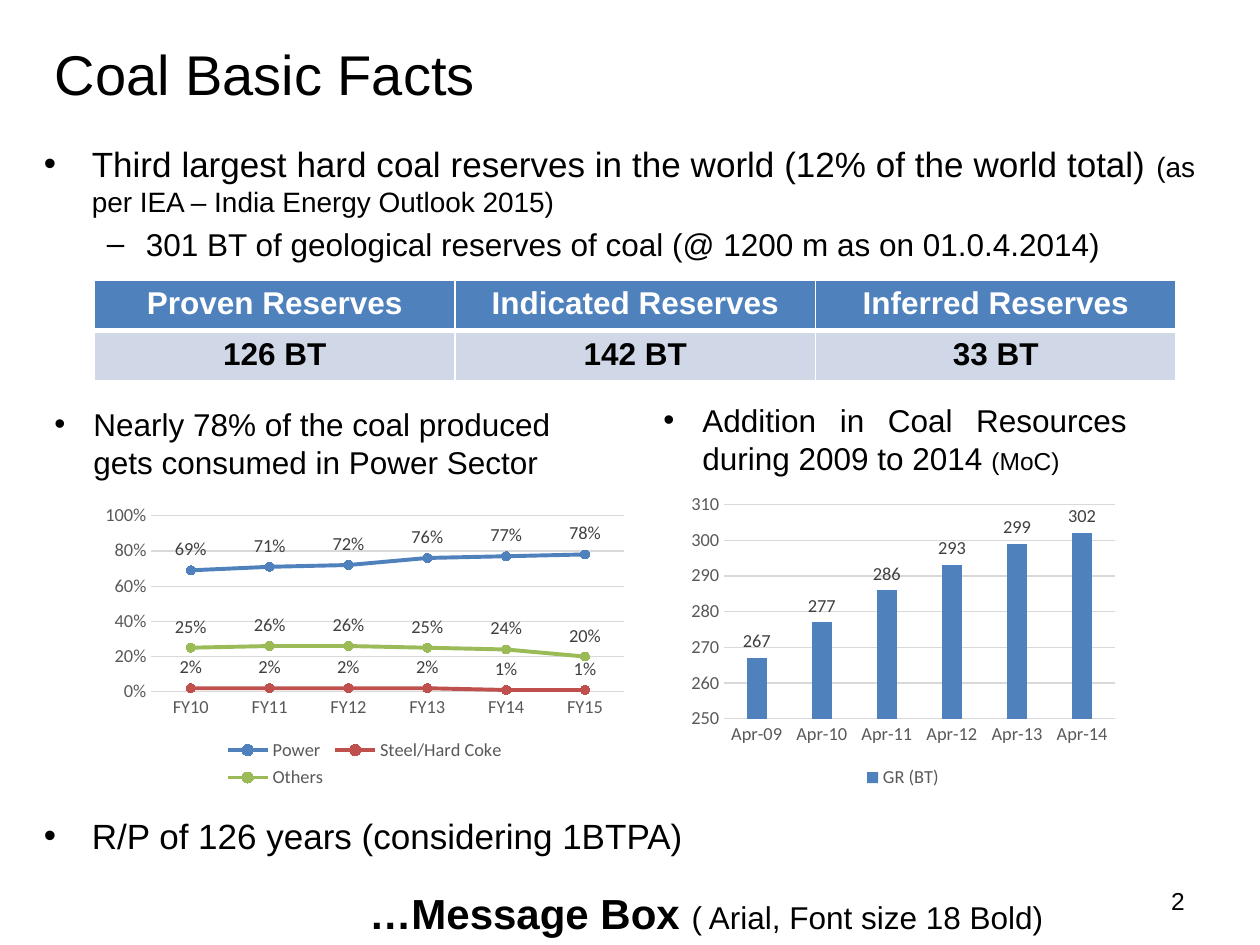
from lxml.etree import SubElement
from pptx import Presentation
from pptx.chart.data import CategoryChartData
from pptx.dml.color import RGBColor
from pptx.enum.chart import (XL_CHART_TYPE, XL_LABEL_POSITION, XL_LEGEND_POSITION,
                             XL_MARKER_STYLE, XL_TICK_MARK)
from pptx.enum.text import MSO_ANCHOR, PP_ALIGN
from pptx.oxml.ns import qn
from pptx.util import Inches, Pt

BLACK = RGBColor(0x00, 0x00, 0x00)
WHITE = RGBColor(0xFF, 0xFF, 0xFF)
BLUE = RGBColor(0x4F, 0x81, 0xBD)
RED = RGBColor(0xC0, 0x50, 0x4D)
GREEN = RGBColor(0x9B, 0xBB, 0x59)
PALE_BLUE = RGBColor(0xD0, 0xD8, 0xE8)
AXIS_TEXT = RGBColor(0x59, 0x59, 0x59)
LABEL_TEXT = RGBColor(0x40, 0x40, 0x40)
GRID_LINE = RGBColor(0xD9, 0xD9, 0xD9)

deck = Presentation()
deck.slide_width, deck.slide_height = Inches(10), Inches(7.5)
CELL = deck.slide_width / 120  # the slide is a grid of 120 columns by 90 rows
slide = deck.slides.add_slide(deck.slide_layouts[5])


def place(left, top, width, height):
    """Turn grid columns and rows into slide lengths."""
    return [round(part * CELL) for part in (left, top, width, height)]


def write(frame, runs, align=PP_ALIGN.LEFT, bullet=None, indent=0, hang=0, before=0):
    """Add a paragraph of (text, size, bold, colour) runs to a text frame."""
    first = frame.paragraphs[0]
    paragraph = frame.add_paragraph() if first.runs else first
    properties = paragraph._p.get_or_add_pPr()
    if bullet:
        properties.set("marL", str(Inches(indent)))
        properties.set("indent", str(-Inches(hang)))
        SubElement(properties, qn("a:buFont")).set("typeface", "Arial")
        SubElement(properties, qn("a:buChar")).set("char", bullet)
    paragraph.alignment = align
    if before:
        paragraph.space_before = Pt(before)
    for text, size, bold, color in runs:
        run = paragraph.add_run()
        run.text = text
        run.font.name, run.font.size, run.font.bold = "Arial", Pt(size), bold
        run.font.color.rgb = color


# Title
title = slide.shapes.title
title.left, title.top, title.width, title.height = place(4, 2, 103, 10)
title.text_frame.vertical_anchor = MSO_ANCHOR.MIDDLE
write(title.text_frame, [("Coal Basic Facts", 32, False, BLACK)])

# Text blocks: place on the grid, then paragraphs
first_level = dict(align=PP_ALIGN.JUSTIFY, bullet="•", indent=0.38, hang=0.38)
second_level = dict(align=PP_ALIGN.JUSTIFY, bullet="–", indent=0.81, hang=0.31, before=3.6)
chart_heading = dict(bullet="•", indent=0.31, hang=0.31)
text_blocks = [
    ((3, 13, 112, 13), [
        ([("Third largest hard coal reserves in the world (12% of the world total) ", 20, False, BLACK),
          ("(as per IEA – India Energy Outlook 2015)", 16, False, BLACK)], first_level),
        ([("301 BT of geological reserves of coal (@ 1200 m as on 01.0.4.2014)", 18, False, BLACK)],
         second_level)]),
    ((4, 38, 53, 8.5), [
        ([("Nearly 78% of the coal produced gets consumed in Power Sector", 18, False, BLACK)],
         chart_heading)]),
    ((62, 37.6, 46.5, 8.5), [
        ([("Addition in Coal Resources during 2009 to 2014 ", 18, False, BLACK),
          ("(MoC)", 14, False, BLACK)], dict(chart_heading, align=PP_ALIGN.JUSTIFY))]),
    ((3, 77, 112, 5), [
        ([("R/P of 126 years (considering 1BTPA)", 20, False, BLACK)], first_level)]),
    ((34, 83.9, 80, 6.1), [
        ([("…Message Box ", 24, True, BLACK),
          ("( Arial, Font size 18 Bold)", 18, False, BLACK)], {})]),
    ((86, 83.4, 28, 4.8), [([("2", 14, False, BLACK)], dict(align=PP_ALIGN.RIGHT))]),
]
for area, paragraphs in text_blocks:
    frame = slide.shapes.add_textbox(*place(*area)).text_frame
    frame.word_wrap = True
    for runs, style in paragraphs:
        write(frame, runs, **style)
frame.vertical_anchor = MSO_ANCHOR.MIDDLE  # slide number

# Reserves table
reserves = [("Proven Reserves", "Indicated Reserves", "Inferred Reserves"),
            ("126 BT", "142 BT", "33 BT")]
row_styles = [(BLUE, WHITE, 3), (PALE_BLUE, BLACK, 1)]
table = slide.shapes.add_table(2, 3, *place(9, 26.65, 103, 9.1)).table
for row, (values, (fill, color, rule)) in enumerate(zip(reserves, row_styles)):
    for column, value in enumerate(values):
        cell = table.cell(row, column)
        write(cell.text_frame, [(value, 18, True, color)], PP_ALIGN.CENTER)
        borders = cell._tc.get_or_add_tcPr()
        top_rule = row_styles[row - 1][2] if row else 1
        for side, width in (("L", 1), ("R", 1), ("T", top_rule), ("B", rule)):
            border = SubElement(borders, qn(f"a:ln{side}"), w=str(Pt(width)))
            SubElement(SubElement(border, qn("a:solidFill")), qn("a:srgbClr")).set("val", str(WHITE))
        cell.fill.solid()
        cell.fill.fore_color.rgb = fill

# Charts: type, place, categories, series, number format, value scale
charts = [
    (XL_CHART_TYPE.COLUMN_CLUSTERED, (65, 46.4, 42, 29.2),
     [f"Apr-{year:02}" for year in range(9, 15)],
     [("GR (BT)", BLUE, (267, 277, 286, 293, 299, 302))], "0", (250, 310, 10)),
    (XL_CHART_TYPE.LINE_MARKERS, (9, 47.5, 51.5, 28.1),
     [f"FY{year}" for year in range(10, 16)],
     [("Power", BLUE, (0.69, 0.71, 0.72, 0.76, 0.77, 0.78)),
      ("Steel/Hard Coke", RED, (0.02, 0.02, 0.02, 0.02, 0.01, 0.01)),
      ("Others", GREEN, (0.25, 0.26, 0.26, 0.25, 0.24, 0.20))], "0%", (0, 1, 0.2)),
]
for kind, area, categories, series_list, number_format, scale in charts:
    data = CategoryChartData(number_format=number_format)
    data.categories = categories
    for name, color, values in series_list:
        data.add_series(name, values)
    chart = slide.shapes.add_chart(kind, *place(*area), data).chart
    chart.has_title = False
    chart.font.name, chart.font.size = "Calibri", Pt(10.5)
    chart.font.color.rgb = AXIS_TEXT
    chart.has_legend = True
    chart.legend.position = XL_LEGEND_POSITION.BOTTOM
    chart.legend.include_in_layout = False

    value_axis, category_axis = chart.value_axis, chart.category_axis
    value_axis.minimum_scale, value_axis.maximum_scale, value_axis.major_unit = scale
    value_axis.tick_labels.number_format = number_format
    value_axis.tick_labels.number_format_is_linked = False
    value_axis.format.line.fill.background()
    for axis in (value_axis, category_axis):
        axis.major_tick_mark = axis.minor_tick_mark = XL_TICK_MARK.NONE
    for line in (value_axis.major_gridlines.format.line, category_axis.format.line):
        line.color.rgb, line.width = GRID_LINE, Pt(0.75)

    is_column = kind == XL_CHART_TYPE.COLUMN_CLUSTERED
    plot = chart.plots[0]
    plot.vary_by_categories = False
    if is_column:
        plot.gap_width, plot.overlap = 219, -27
    for series, (name, color, values) in zip(plot.series, series_list):
        if is_column:
            fills = [series.format.fill]
        else:
            series.smooth = False
            series.format.line.color.rgb, series.format.line.width = color, Pt(2.25)
            series.marker.style, series.marker.size = XL_MARKER_STYLE.CIRCLE, 5
            series.marker.format.line.color.rgb = color
            fills = [series.marker.format.fill]
        for fill in fills:
            fill.solid()
            fill.fore_color.rgb = color
        labels = series.data_labels
        labels.show_value = True
        labels.number_format, labels.number_format_is_linked = number_format, False
        labels.position = XL_LABEL_POSITION.OUTSIDE_END if is_column else XL_LABEL_POSITION.ABOVE
        labels.font.name, labels.font.size = "Calibri", Pt(10.5)
        labels.font.color.rgb = LABEL_TEXT

deck.save("out.pptx")
